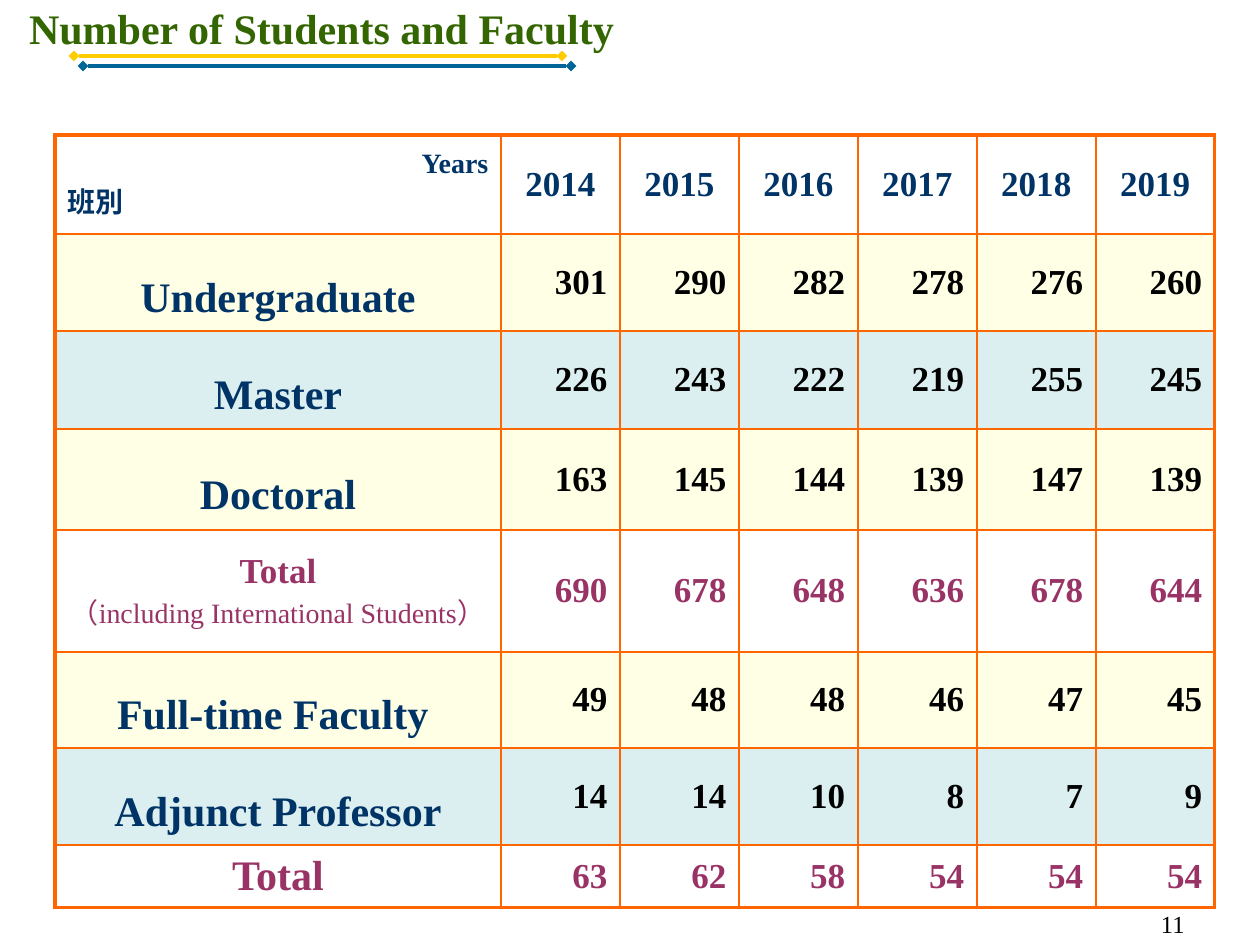
from lxml.etree import SubElement
from pptx import Presentation
from pptx.dml.color import RGBColor
from pptx.enum.shapes import MSO_CONNECTOR as Connector
from pptx.enum.text import MSO_ANCHOR as Anchor, MSO_AUTO_SIZE as AutoSize, PP_ALIGN as Align
from pptx.oxml import parse_xml
from pptx.oxml.ns import nsdecls, qn
from pptx.util import Pt

PX = 914400 // 126
FONT = "Times New Roman"
NAVY, PLUM, BLACK, GREEN, ORANGE = "003366", "993366", "000000", "336600", "FF6600"
CREAM, AQUA = "FFFFCC", "BBE0E3"

TITLE = "Number of Students and Faculty"
PAGE_NUMBER = "11"
RULES = [((74, 56), (562, 56), "FFCC00"), ((83, 66), (571, 66), "006699")]
CORNER = [("Years", Align.RIGHT), ("班別", Align.LEFT)]
YEARS = [2014, 2015, 2016, 2017, 2018, 2019]
GROUPS = [
    ("Undergraduate", CREAM, 97, [301, 290, 282, 278, 276, 260]),
    ("Master", AQUA, 98, [226, 243, 222, 219, 255, 245]),
    ("Doctoral", CREAM, 101, [163, 145, 144, 139, 147, 139]),
    ("Total", None, 122, [690, 678, 648, 636, 678, 644]),
    ("Full-time Faculty ", CREAM, 96, [49, 48, 48, 46, 47, 45]),
    ("Adjunct Professor", AQUA, 97, [14, 14, 10, 8, 7, 9]),
    ("Total", None, 63, [63, 62, 58, 54, 54, 54]),
]
STUDENT_TOTAL = 4
STUDENT_NOTE = "（including International Students）"
TABLE_LEFT, TABLE_TOP, HEADER_HEIGHT = 55, 135, 99
LABEL_WIDTH, YEAR_WIDTH = 446, 119
LABEL_DROP, NOTE_DROP = 38, 2


def px(*lengths):
    """Turn pixel lengths into EMU."""
    return [length * PX for length in lengths]


def color(hex_value):
    """Return the colour of a hex string."""
    return RGBColor.from_string(hex_value)


def write(frame, lines):
    """Write lines of (text, size, colour, bold, alignment) into a text frame."""
    for index, (text, size, hex_value, bold, align) in enumerate(lines):
        para = frame.add_paragraph() if index else frame.paragraphs[0]
        para.alignment = align
        span = para.add_run()
        span.text = text
        for name, value in {"name": FONT, "size": Pt(size), "bold": bold}.items():
            setattr(span.font, name, value)
        span.font.color.rgb = color(hex_value)


def paint(cell, hex_value):
    """Fill a cell with a half-transparent colour, or leave it clear."""
    if hex_value is None:
        cell.fill.background()
        return
    cell.fill.solid()
    cell.fill.fore_color.rgb = color(hex_value)
    tint = next(cell._tc.tcPr.iter(qn("a:srgbClr")))
    SubElement(tint, qn("a:alpha"), val="50000")


def border(cell, outer_sides):
    """Draw the four borders of a cell, heavier on the outer sides."""
    for index, side in enumerate("LRTB"):
        width = Pt(2.25 if side in outer_sides else 1.5)
        cell._tc.tcPr.insert(index, parse_xml(
            f'<a:ln{side} {nsdecls("a")} w="{width}"><a:solidFill>'
            f'<a:srgbClr val="{ORANGE}"/></a:solidFill></a:ln{side}>'))


def label_lines(index, label, fill):
    """Return the lines of a row's label."""
    if index == STUDENT_TOTAL:
        return [(label, 20, PLUM, True, Align.CENTER),
                (STUDENT_NOTE, 16, PLUM, False, Align.CENTER)]
    return [(label, 24, NAVY if fill else PLUM, True, Align.CENTER)]


def table_rows():
    """Return each table row as a height, a fill and the lines of its cells."""
    corner = [(text, 16, NAVY, True, align) for text, align in CORNER]
    years = [[(str(year), 20, NAVY, True, Align.CENTER)] for year in YEARS]
    rows = [(HEADER_HEIGHT, None, [corner] + years)]
    for index, (label, fill, height, counts) in enumerate(GROUPS, 1):
        ink = BLACK if fill else PLUM
        cells = [[(str(count), 20, ink, True, Align.RIGHT)] for count in counts]
        rows.append((height, fill, [label_lines(index, label, fill)] + cells))
    return rows


def add_counts(page):
    """Add the table of students and faculty."""
    rows = table_rows()
    widths = [LABEL_WIDTH] + [YEAR_WIDTH] * len(YEARS)
    size = sum(widths), sum(height for height, _, _ in rows)
    table = page.shapes.add_table(
        len(rows), len(widths), *px(TABLE_LEFT, TABLE_TOP, *size)).table
    table.first_row = table.horz_banding = False
    for column, width in zip(table.columns, widths):
        column.width = width * PX
    for r, (height, fill, cells) in enumerate(rows):
        table.rows[r].height = height * PX
        for c, lines in enumerate(cells):
            cell = table.cell(r, c)
            cell.vertical_anchor = Anchor.MIDDLE
            if fill and c == 0:
                cell.margin_top = LABEL_DROP * PX
            if (r, c) == (STUDENT_TOTAL, 0):
                cell.margin_top, cell.margin_bottom = px(NOTE_DROP, 0)
            write(cell.text_frame, lines)
            paint(cell, fill)
            edges = {"L": c == 0, "R": c == len(widths) - 1,
                     "T": r == 0, "B": r == len(rows) - 1}
            border(cell, [side for side, outer in edges.items() if outer])


def add_rule(page, start, end, hex_value):
    """Add a line with a diamond at each end."""
    rule = page.shapes.add_connector(Connector.STRAIGHT, *px(*start, *end))
    rule.line.width = Pt(2)
    rule.line.color.rgb = color(hex_value)
    properties = rule._element.spPr
    for end_name in ("a:headEnd", "a:tailEnd"):
        SubElement(properties.find(qn("a:ln")), qn(end_name), type="diamond")
    SubElement(properties, qn("a:effectLst"))


def place_title(page):
    """Move and format the title."""
    title = page.shapes.title
    title.left, title.top, title.width, title.height = px(4, -4, 635, 64)
    frame = title.text_frame
    frame.auto_size = AutoSize.NONE
    frame.vertical_anchor = Anchor.TOP
    write(frame, [(TITLE, 24, GREEN, True, Align.CENTER)])


def main():
    """Build the slide and save it."""
    deck = Presentation()
    deck.slide_width, deck.slide_height = px(1260, 945)
    page = deck.slides.add_slide(deck.slide_layouts[5])
    add_counts(page)
    for start, end, hex_value in RULES:
        add_rule(page, start, end, hex_value)
    place_title(page)
    box = page.shapes.add_textbox(*px(903, 903, 294, 42))
    box.text_frame.word_wrap = True
    write(box.text_frame, [(PAGE_NUMBER, 14, BLACK, False, Align.RIGHT)])
    deck.save("out.pptx")


if __name__ == "__main__":
    main()
